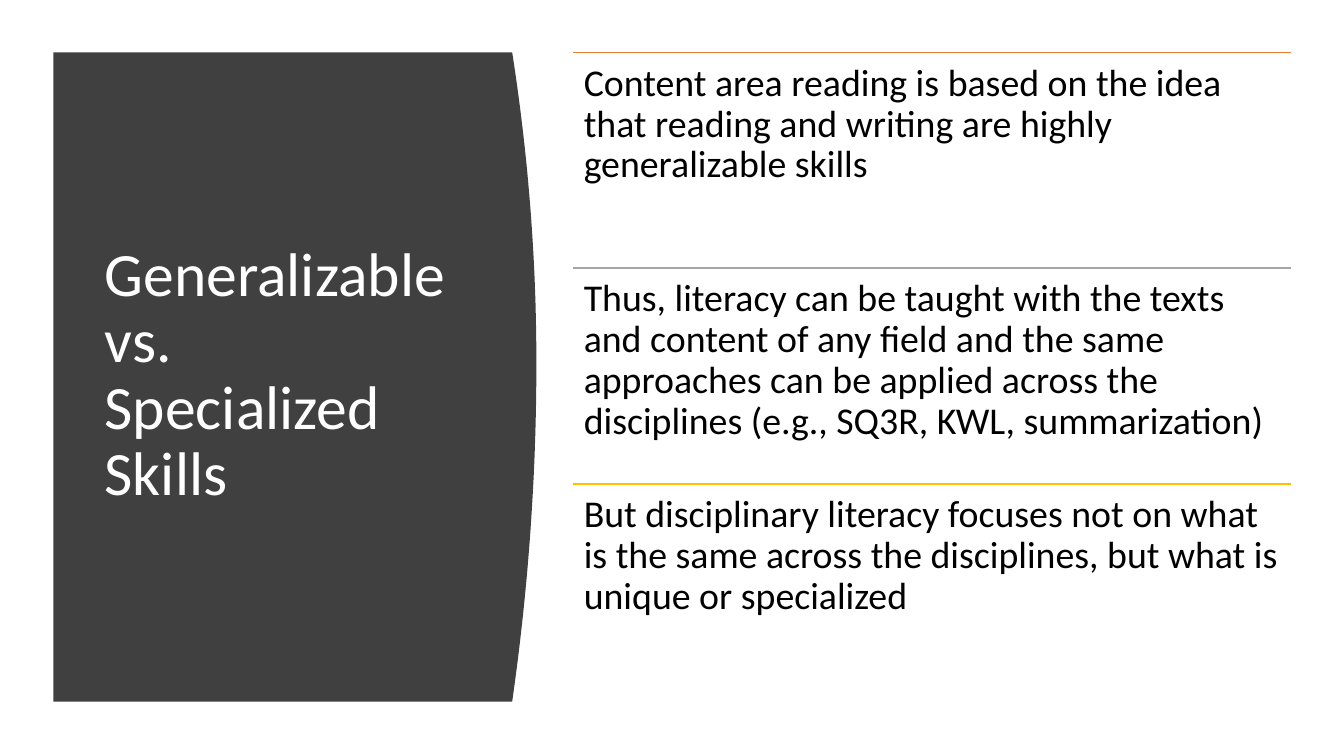
from dataclasses import dataclass

from lxml import etree
from pptx import Presentation
from pptx.dml.color import RGBColor
from pptx.enum.shapes import MSO_CONNECTOR
from pptx.enum.text import MSO_ANCHOR
from pptx.oxml.ns import qn
from pptx.slide import Slide
from pptx.util import Emu, Pt

STRAIGHT = MSO_CONNECTOR.STRAIGHT
TOP, MIDDLE = MSO_ANCHOR.TOP, MSO_ANCHOR.MIDDLE
EMU_PER_PX = 9144  # 100 px to the inch


@dataclass(frozen=True)
class Theme:
    font: str = "Calibri"
    panel: str = "404040"
    title_color: str = "FFFFFF"
    body_color: str = "000000"
    title_size: int = 44
    body_size: int = 27
    rule_width: int = 1


@dataclass(frozen=True)
class Box:
    left: int
    top: int
    width: int
    height: int


@dataclass(frozen=True)
class Margins:
    left: int
    top: int
    right: int
    bottom: int


@dataclass(frozen=True)
class Point:
    text: str
    rule_color: str


THEME = Theme()
PANEL = Box(53, 52, 479, 644)
PANEL_BULGE = 24
PANEL_PEAK = 360
CURVE_STEPS = 60
TITLE = Box(94, 111, 374, 524)
TITLE_MARGINS = Margins(10, 5, 20, 5)
FIRST_POINT = Box(568, 52, 712, 214)
POINT_MARGINS = Margins(11, 11, 11, 11)
POINTS = (
    Point("Content area reading is based on the idea that reading and writing "
          "are highly generalizable skills", "ED7D31"),
    Point("Thus, literacy can be taught with the texts and content of any field "
          "and the same approaches can be applied across the disciplines "
          "(e.g., SQ3R, KWL, summarization)", "A5A5A5"),
    Point("But disciplinary literacy focuses not on what is the same across the "
          "disciplines, but what is unique or specialized", "FFC000"),
)


def px(length: float) -> Emu:
    return Emu(round(length * EMU_PER_PX))


def add_panel(page: Slide) -> None:
    """Draw the dark panel, whose right side is a parabola on each side of its peak."""
    right, bottom = PANEL.left + PANEL.width, PANEL.top + PANEL.height
    curve = []
    for step in range(CURVE_STEPS + 1):
        y = PANEL.top + PANEL.height * step / CURVE_STEPS
        reach = PANEL_PEAK - PANEL.top if y < PANEL_PEAK else bottom - PANEL_PEAK
        x = right - PANEL_BULGE * ((y - PANEL_PEAK) / reach) ** 2
        curve.append((px(x), px(y)))
    outline = page.shapes.build_freeform(px(PANEL.left), px(PANEL.top))
    outline.add_line_segments([*curve, (px(PANEL.left), px(bottom))], close=True)
    panel = outline.convert_to_shape()
    panel.shadow.inherit = False
    panel.fill.solid()
    panel.fill.fore_color.rgb = RGBColor.from_string(THEME.panel)
    panel.line.fill.background()


def add_text(page: Slide, box: Box, text: str, size: int, color: str,
             margins: Margins, anchor: MSO_ANCHOR) -> None:
    frame = page.shapes.add_textbox(
        px(box.left), px(box.top), px(box.width), px(box.height)).text_frame
    frame.word_wrap = True
    frame.vertical_anchor = anchor
    frame.margin_left, frame.margin_top = px(margins.left), px(margins.top)
    frame.margin_right, frame.margin_bottom = px(margins.right), px(margins.bottom)
    frame.text = text
    para = frame.paragraphs[0]
    para.line_spacing = 0.9
    for span in para.runs:
        span.font.name = THEME.font
        span.font.size = Pt(size)
        span.font.color.rgb = RGBColor.from_string(color)


def add_rule(page: Slide, box: Box, color: str) -> None:
    """Draw a line along the top of the box."""
    rule = page.shapes.add_connector(
        STRAIGHT, px(box.left), px(box.top), px(box.left + box.width), px(box.top))
    rule.line.color.rgb = RGBColor.from_string(color)
    rule.line.width = Pt(THEME.rule_width)
    etree.SubElement(rule._element.spPr, qn("a:effectLst"))


def main() -> None:
    deck = Presentation()
    deck.slide_width, deck.slide_height = px(1333), px(750)
    page = deck.slides.add_slide(deck.slide_layouts[6])
    add_panel(page)
    add_text(page, TITLE, "Generalizable vs. Specialized Skills", THEME.title_size,
             THEME.title_color, TITLE_MARGINS, MIDDLE)
    for index, point in enumerate(POINTS):
        box = Box(FIRST_POINT.left, FIRST_POINT.top + index * FIRST_POINT.height,
                  FIRST_POINT.width, FIRST_POINT.height)
        add_rule(page, box, point.rule_color)
        add_text(page, box, point.text, THEME.body_size, THEME.body_color,
                 POINT_MARGINS, TOP)
    deck.save("out.pptx")


if __name__ == "__main__":
    main()
